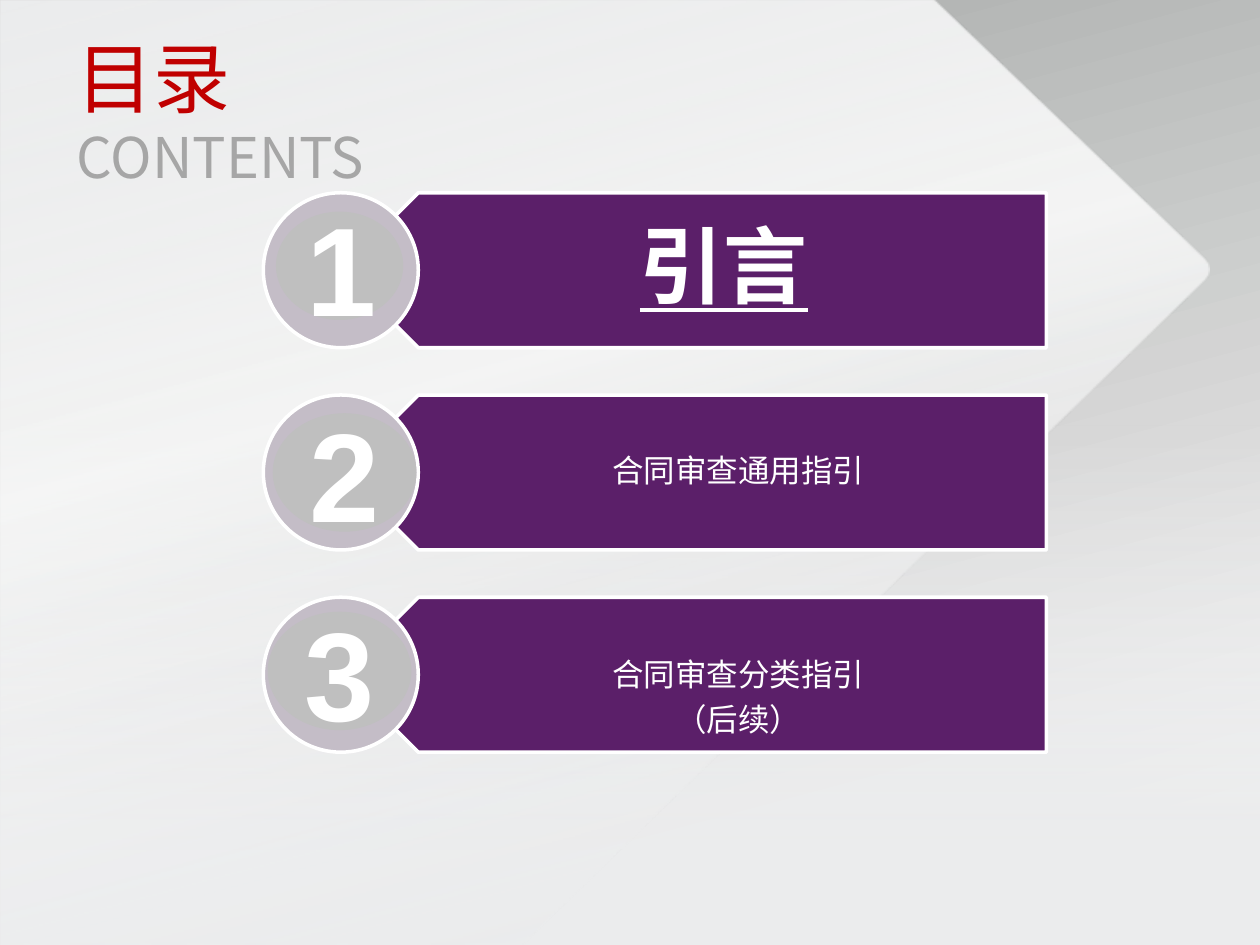
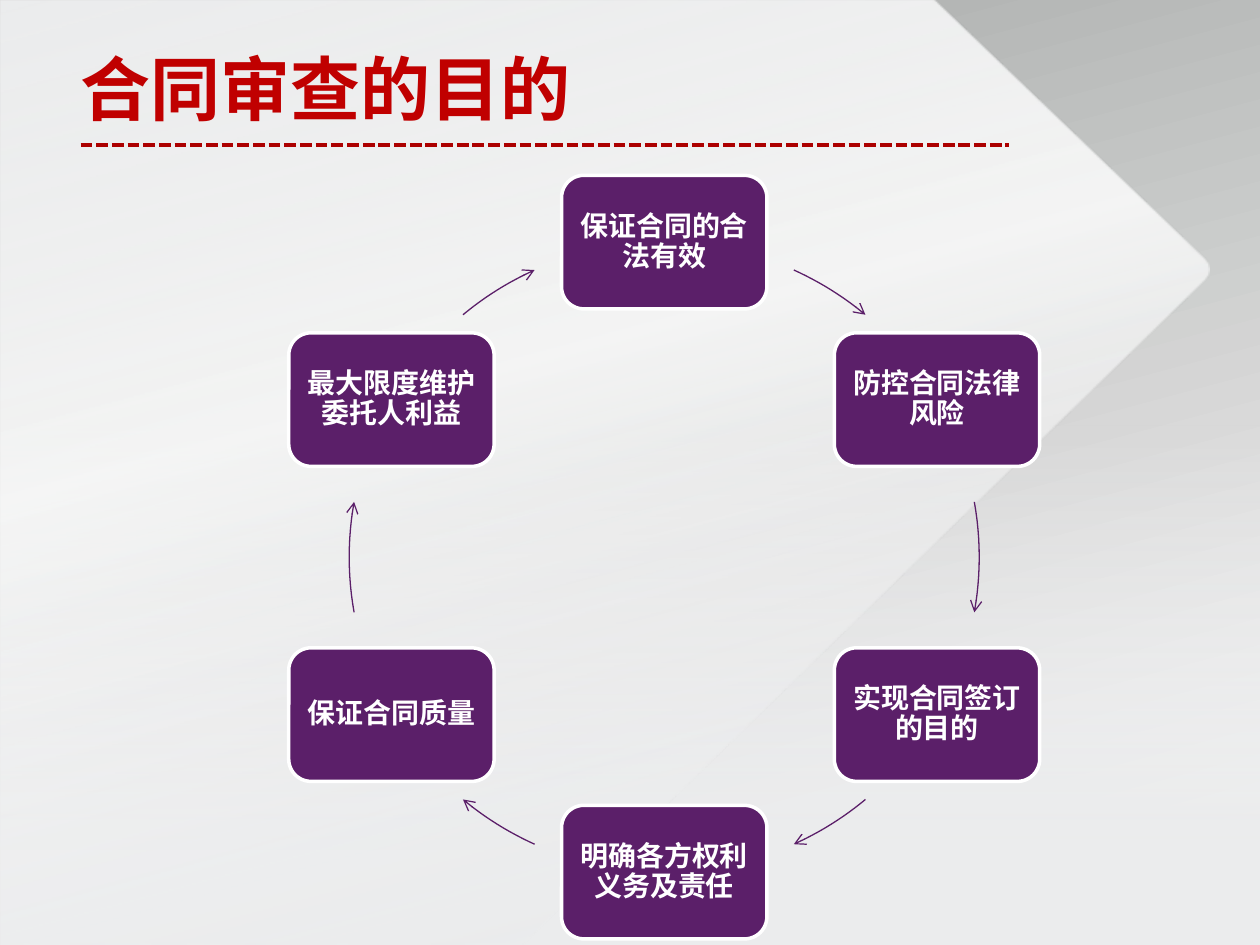
import math

import pptx
import pptx.dml.color
import pptx.enum.dml
import pptx.enum.shapes
import pptx.enum.text
import pptx.oxml
import pptx.oxml.ns
import pptx.util

RGB = pptx.dml.color.RGBColor
SHAPE = pptx.enum.shapes.MSO_SHAPE
ALIGN = pptx.enum.text.PP_ALIGN
ANCHOR = pptx.enum.text.MSO_ANCHOR
Pt = pptx.util.Pt
qn = pptx.oxml.ns.qn
NS = pptx.oxml.ns.nsdecls("a")

PURPLE = RGB(0x5B, 0x1F, 0x69)
LILAC = RGB(0xC4, 0xBD, 0xC7)
SILVER = RGB(0xBF, 0xBF, 0xBF)
GREY = RGB(0xA6, 0xA6, 0xA6)
MIST = RGB(0xEB, 0xEC, 0xED)
STONE = RGB(0xA2, 0xA4, 0xA3)
RED = RGB(0xC0, 0x00, 0x00)
RULE_RED = RGB(0xAC, 0x00, 0x00)
WHITE = RGB(0xFF, 0xFF, 0xFF)

COLS, ROWS = 100, 75
PANEL = [(74.1, 0), (0, 0), (0, 75), (41.5, 75), (95.6, 22.3),
         (95.9, 21.9), (96, 21.45), (95.9, 21), (95.6, 20.6)]


class Deck:
    """Style and current slide; lengths are columns and rows of a 100 x 75 grid."""

    def __init__(self):
        self.prs = pptx.Presentation()
        self.prs.slide_width = pptx.util.Inches(10)
        self.prs.slide_height = pptx.util.Inches(7.5)
        self.slide = None

    def x(self, cols):
        return round(self.prs.slide_width * cols / COLS)

    def y(self, rows):
        return round(self.prs.slide_height * rows / ROWS)

    def box(self, left, top, width, height):
        return self.x(left), self.y(top), self.x(width), self.y(height)

    def new_slide(self):
        self.slide = self.prs.slides.add_slide(self.prs.slide_layouts[6])
        self.gradient(self.slide.background, self.slide.element, 75,
                      [(0, STONE, 100), (100, WHITE, 100)])
        veil = self.shape(SHAPE.RECTANGLE, (0, 0, COLS, ROWS), MIST)
        self.gradient(veil, veil.element, 90,
                      [(0, MIST, 0), (45, MIST, 0), (90, MIST, 100)])
        panel = self.outline(PANEL, close=True)
        panel.line.fill.background()
        self.gradient(panel, panel.element, 75,
                      [(0, MIST, 100), (40, WHITE, 80), (90, MIST, 0)])

    def gradient(self, filled, element, angle, stops):
        """Stops are (position, colour, opacity), both numbers in percent."""
        filled.fill.solid()
        solid = element.find(".//" + qn("a:solidFill"))
        gs = "".join(
            f'<a:gs pos="{pos * 1000}"><a:srgbClr val="{colour}">'
            f'<a:alpha val="{alpha * 1000}"/></a:srgbClr></a:gs>'
            for pos, colour, alpha in stops)
        grad = pptx.oxml.parse_xml(
            f'<a:gradFill {NS} rotWithShape="1"><a:gsLst>{gs}</a:gsLst>'
            f'<a:lin ang="{angle * 60000}" scaled="0"/></a:gradFill>')
        solid.getparent().replace(solid, grad)

    def outline(self, points, close=False):
        pts = [(self.x(px), self.y(py)) for px, py in points]
        builder = self.slide.shapes.build_freeform(*pts[0], scale=1.0)
        builder.add_line_segments(pts[1:], close=close)
        sp = builder.convert_to_shape()
        sp.shadow.inherit = False
        return sp

    def reframe(self, sp, box):
        """Give an outline a larger frame and leave its drawn points in place."""
        left, top, width, height = self.box(*box)
        dx, dy = sp.left - left, sp.top - top
        geometry = sp.element.find(".//" + qn("a:path"))
        for pt in geometry.iter(qn("a:pt")):
            pt.set("x", str(int(pt.get("x")) + dx))
            pt.set("y", str(int(pt.get("y")) + dy))
        geometry.set("w", str(width))
        geometry.set("h", str(height))
        sp.left, sp.top, sp.width, sp.height = left, top, width, height

    def shape(self, kind, box, fill, edge=None):
        sp = self.slide.shapes.add_shape(kind, *self.box(*box))
        sp.shadow.inherit = False
        sp.fill.solid()
        sp.fill.fore_color.rgb = fill
        if edge is None:
            sp.line.fill.background()
        else:
            sp.line.color.rgb = edge
            sp.line.width = Pt(2)
        return sp

    def textbox(self, box):
        return self.slide.shapes.add_textbox(*self.box(*box))

    def frame(self, sp, insets=(1, 0.5, 1, 0.5), anchor=ANCHOR.TOP, wrap=True):
        tf = sp.text_frame
        tf.word_wrap = wrap
        tf.vertical_anchor = anchor
        left, top, right, bottom = insets
        tf.margin_left, tf.margin_right = self.x(left), self.x(right)
        tf.margin_top, tf.margin_bottom = self.y(top), self.y(bottom)
        return tf

    def run(self, p, text, size, colour=WHITE, font="Arial", **style):
        r = p.add_run()
        r.text = text
        r.font.name, r.font.size = font, Pt(size)
        r.font.color.rgb = colour
        for name, value in style.items():
            setattr(r.font, name, value)

    def centred(self, sp, lines, size, insets, **style):
        """Tightly set, centred lines in the middle of a shape."""
        tf = self.frame(sp, insets, ANCHOR.MIDDLE)
        for i, line in enumerate(lines):
            p = tf.add_paragraph() if i else tf.paragraphs[0]
            p.alignment = ALIGN.CENTER
            p.line_spacing = 0.9
            p.space_after = Pt(round(size * 0.35, 1))
            self.run(p, line, size, **style)

    def rule(self, left, right, row):
        line = self.slide.shapes.add_connector(
            pptx.enum.shapes.MSO_CONNECTOR.STRAIGHT,
            self.x(left), self.y(row), self.x(right), self.y(row))
        line.line.color.rgb = RULE_RED
        line.line.width = Pt(2.25)
        line.line.dash_style = pptx.enum.dml.MSO_LINE.SQUARE_DOT
        line.element.spPr.append(pptx.oxml.parse_xml(f'<a:effectLst {NS}/>'))

    def arc_arrow(self, points, ring_box):
        sp = self.outline(points)
        self.reframe(sp, ring_box)
        sp.fill.background()
        sp.line.color.rgb = PURPLE
        sp.line.width = Pt(0.75)
        sp.element.spPr.find(qn("a:ln")).append(
            pptx.oxml.parse_xml(f'<a:tailEnd {NS} type="arrow"/>'))


def contents_slide(deck):
    deck.new_slide()
    tf = deck.frame(deck.textbox((5.1, 1.9, 38.5, 8.4)), wrap=False)
    p = tf.paragraphs[0]
    deck.run(p, "目录", 44, RED, "Noto Sans CJK SC")
    p.add_line_break()
    deck.run(p, "CONTENTS", 32, GREY, "Noto Sans CJK SC")

    first_top, pitch, height = 15.3, 16.05, 12.3
    plain = dict(size=18)
    entries = [
        (["引言"], (5.4, 2, 3.7, 2), dict(size=48, bold=True, underline=True)),
        (["合同审查通用指引"], (5.4, 0.7, 1.4, 0.7), plain),
        (["合同审查分类指引", "（后续）"], (5.4, 4.5, 1.4, 0.7), plain),
    ]
    for i, (lines, insets, style) in enumerate(entries):
        top = first_top + i * pitch
        bar = deck.shape(SHAPE.PENTAGON, (27.05, top, 56, height), PURPLE, WHITE)
        bar.rotation = 180
        deck.centred(deck.textbox((30.15, top, 52.9, height)), lines,
                     insets=insets, **style)
        deck.shape(SHAPE.OVAL, (20.9, top, height, height), LILAC, WHITE)

    discs = [(21.9, 16.8, 10.1, 8.6), (21.65, 32.8, 11.4, 9.4),
             (21.25, 48.55, 11.4, 9.4)]
    for number, box in enumerate(discs, 1):
        disc = deck.shape(SHAPE.OVAL, box, SILVER)
        p = deck.frame(disc, anchor=ANCHOR.MIDDLE).paragraphs[0]
        p.alignment = ALIGN.CENTER
        deck.run(p, str(number), 72, bold=True)


def purposes_slide(deck):
    deck.new_slide()
    title = deck.frame(deck.textbox((6.4, 3.6, 68, 6.9)), (0, 0, 0, 0))
    deck.run(title.paragraphs[0], "合同审查的目的", 40, RED, "Roboto", bold=True)
    deck.rule(6.4, 80.1, 11.5)

    mid_x, mid_y, radius = 52.72, 44.22, 25
    ring_box = (mid_x - radius, mid_y - radius, 2 * radius, 2 * radius)

    def on_ring(degrees):
        """Point on the ring, clockwise from the top."""
        a = math.radians(degrees)
        return mid_x + radius * math.sin(a), mid_y - radius * math.cos(a)

    purposes = ["保证合同的合法有效", "防控合同法律风险", "实现合同签订的目的",
                "明确各方权利义务及责任", "保证合同质量", "最大限度维护委托人利益"]
    arrows = [(32, 7.7), (90, 10.1), (148, 7.7)]
    arrows += [(middle + 180, half) for middle, half in arrows]
    width, height, steps = 16.3, 10.6, 12
    for i, (purpose, (middle, half)) in enumerate(zip(purposes, arrows)):
        cx, cy = on_ring(i * 360 / len(purposes))
        node = deck.shape(SHAPE.ROUNDED_RECTANGLE,
                          (cx - width / 2, cy - height / 2, width, height),
                          PURPLE, WHITE)
        deck.centred(node, [purpose], 16, (0.7, 1.2, 0.7, 1.2), bold=True)
        deck.arc_arrow([on_ring(middle + half * (2 * s / steps - 1))
                        for s in range(steps + 1)], ring_box)


def main():
    deck = Deck()
    contents_slide(deck)
    purposes_slide(deck)
    deck.prs.save("out.pptx")


if __name__ == "__main__":
    main()
